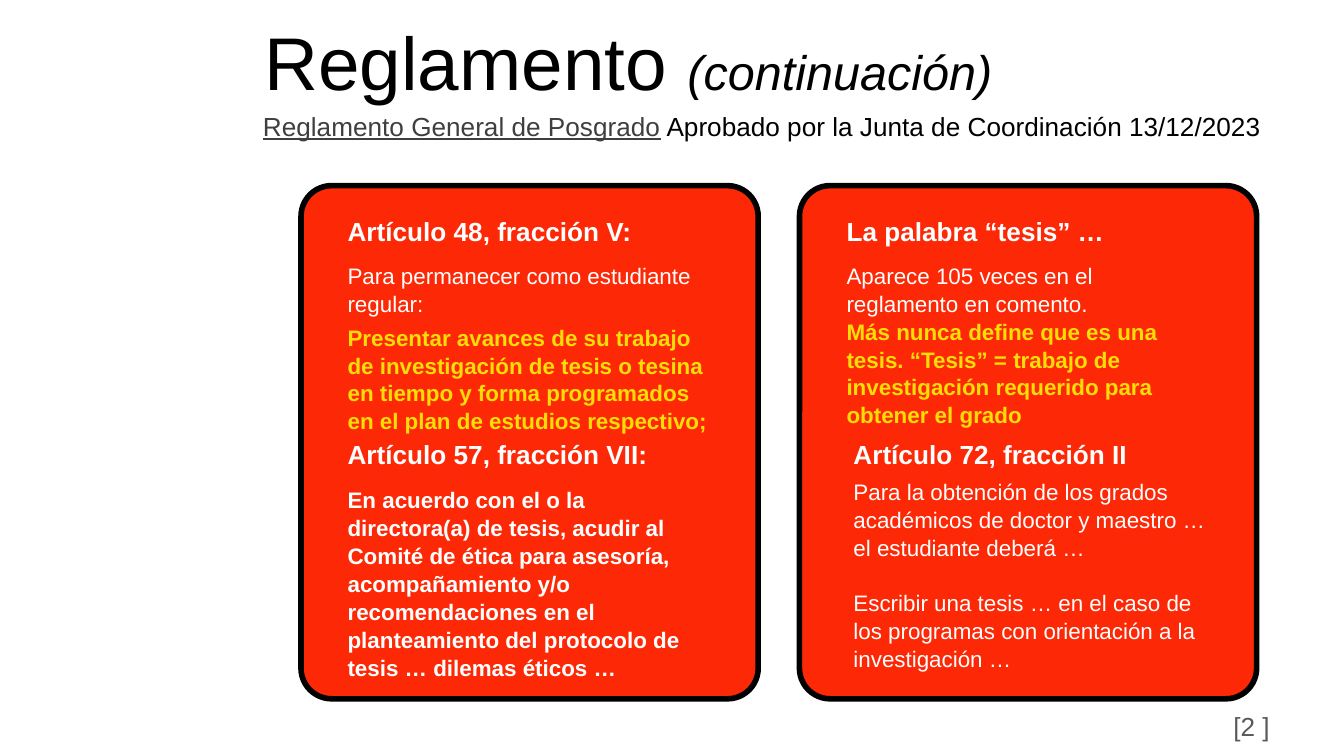
"""Build the slide on thesis rules in the postgraduate regulations."""
from pptx import Presentation, util as u
from pptx.dml.color import RGBColor
from pptx.enum import shapes, text

COLORS = {
    "red": "FD2906", "black": "000000", "white": "FFFFFF",
    "yellow": "FDDD06", "gray": "595959", "link": "3F3F3F",
}
STYLES = {
    "title": ("black", {"size": u.Pt(40)}),
    "aside": ("black", {"size": u.Pt(26), "italic": True}),
    "link": ("link", {"size": u.Pt(14), "underline": True}),
    "subtitle": ("black", {"size": u.Pt(14)}),
    "heading": ("white", {"size": u.Pt(14), "bold": True}),
    "body": ("white", {"size": u.Pt(12)}),
    "strong": ("white", {"size": u.Pt(12), "bold": True}),
    "accent": ("yellow", {"size": u.Pt(12), "bold": True}),
    "number": ("gray", {"size": u.Pt(14)}),
}
TOP, MIDDLE = text.MSO_ANCHOR.TOP, text.MSO_ANCHOR.MIDDLE


def color(name):
    return RGBColor.from_string(COLORS[name])


def add_text(page, place, paragraphs, inset=0.13, anchor=TOP, leading=1.0, gap=0):
    box = page.shapes.add_textbox(*(u.Cm(value) for value in place))
    frame = box.text_frame
    layout = {
        "word_wrap": True, "vertical_anchor": anchor,
        "margin_left": u.Cm(0.25), "margin_right": u.Cm(0.25),
        "margin_top": u.Cm(inset), "margin_bottom": u.Cm(inset),
    }
    for key, value in layout.items():
        setattr(frame, key, value)
    for index, spans in enumerate(paragraphs):
        para = frame.add_paragraph() if index else frame.paragraphs[0]
        para.line_spacing = leading
        para.space_before = u.Pt(gap if index else 0)
        for style, words in spans:
            span = para.add_run()
            span.text = words
            tint, formats = STYLES[style]
            span.font.name = "Arial"
            span.font.color.rgb = color(tint)
            for key, value in formats.items():
                setattr(span.font, key, value)


deck = Presentation()
deck.slide_width, deck.slide_height = u.Cm(25.4), u.Cm(14.29)
page = deck.slides.add_slide(deck.slide_layouts[6])

add_text(page, (4.75, 0.28, 20.55, 1.73),
         [[("title", "Reglamento "), ("aside", "(continuación)")]],
         inset=0.25, anchor=MIDDLE)
add_text(page, (4.72, 2.03, 20.57, 0.69),
         [[("link", "Reglamento General de Posgrado"),
           ("subtitle", " Aprobado por la Junta de Coordinación 13/12/2023")]],
         anchor=MIDDLE)

for left in (5.69, 15.11):
    card = page.shapes.add_shape(shapes.MSO_SHAPE.ROUNDED_RECTANGLE,
                                 u.Cm(left), u.Cm(3.51), u.Cm(8.64), u.Cm(9.7))
    card.adjustments[0] = 0.067
    card.shadow.inherit = False
    card.fill.solid()
    card.fill.fore_color.rgb = color("red")
    card.line.color.rgb = color("black")
    card.line.width = u.Pt(3)

headings = [
    (6.32, 3.94, "Artículo 48, fracción V:"),
    (6.32, 8.15, "Artículo 57, fracción VII:"),
    (15.75, 3.94, "La palabra “tesis” …"),
    (15.88, 8.15, "Artículo 72, fracción II"),
]
for left, top, words in headings:
    add_text(page, (left, top, 7.39, 0.86), [[("heading", words)]])

passages = [
    (6.32, 4.8, 1.63, 0, [("body", "Para permanecer como estudiante regular:")]),
    (6.32, 5.97, 2.36, 0, [
        ("accent", "Presentar avances de su trabajo de investigación de tesis o tesina "
                   "en tiempo y forma programados en el plan de estudios respectivo;")]),
    (6.32, 9.04, 4.04, 0, [
        ("strong", "En acuerdo con el o la directora(a) de tesis, acudir al Comité de "
                   "ética para asesoría, acompañamiento y/o recomendaciones en el "
                   "planteamiento del protocolo de tesis … dilemas éticos …")]),
    (15.75, 4.8, 1.5, 0, [
        ("body", "Aparece 105 veces en el reglamento en comento."),
        ("accent", "Más nunca define que es una tesis. “Tesis” = trabajo de "
                   "investigación requerido para obtener el grado")]),
    (15.88, 8.89, 4.04, 14.4, [
        ("body", "Para la obtención de los grados académicos de doctor y maestro … "
                 "el estudiante deberá …"),
        ("body", "Escribir una tesis … en el caso de los programas con orientación "
                 "a la investigación …")]),
]
for left, top, height, gap, spans in passages:
    add_text(page, (left, top, 7.39, height), [[span] for span in spans],
             leading=1.04, gap=gap)

add_text(page, (23.06, 13.18, 2.24, 1.12), [[("number", "[2 ]")]], inset=0.25)

deck.save("out.pptx")
